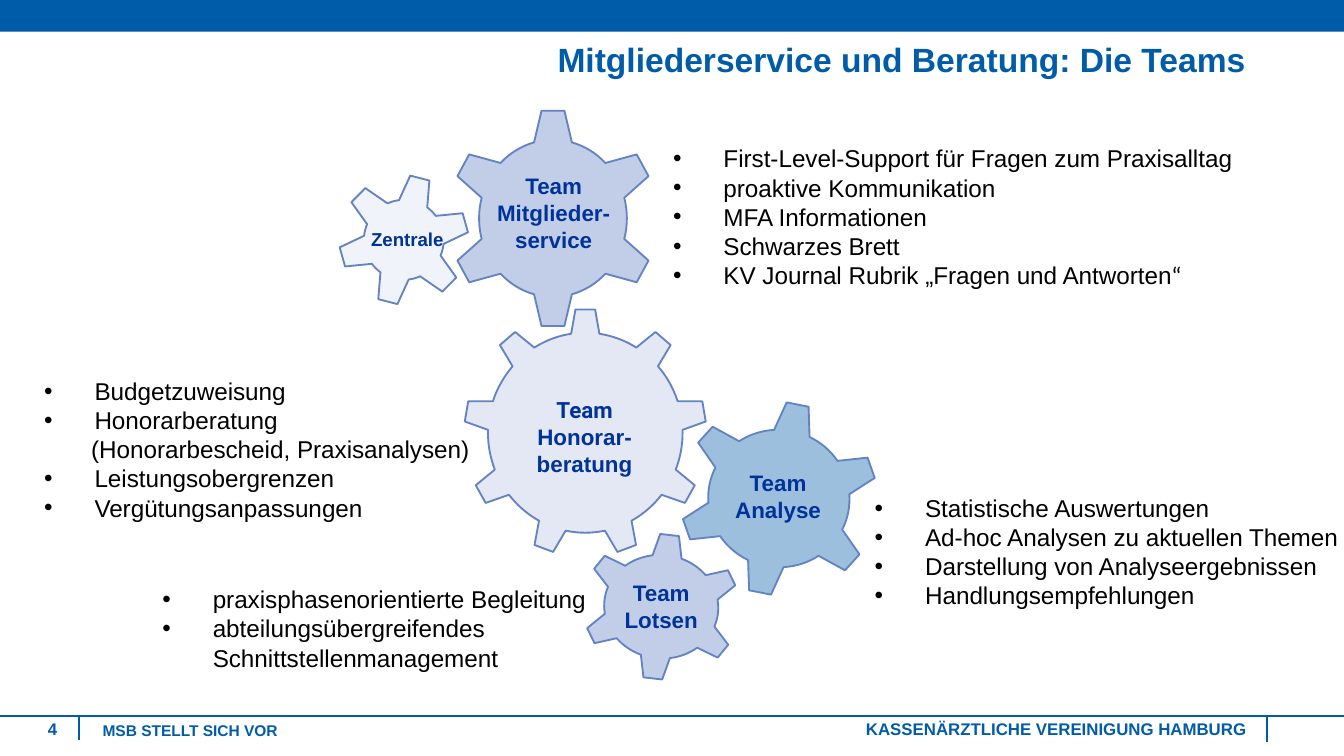
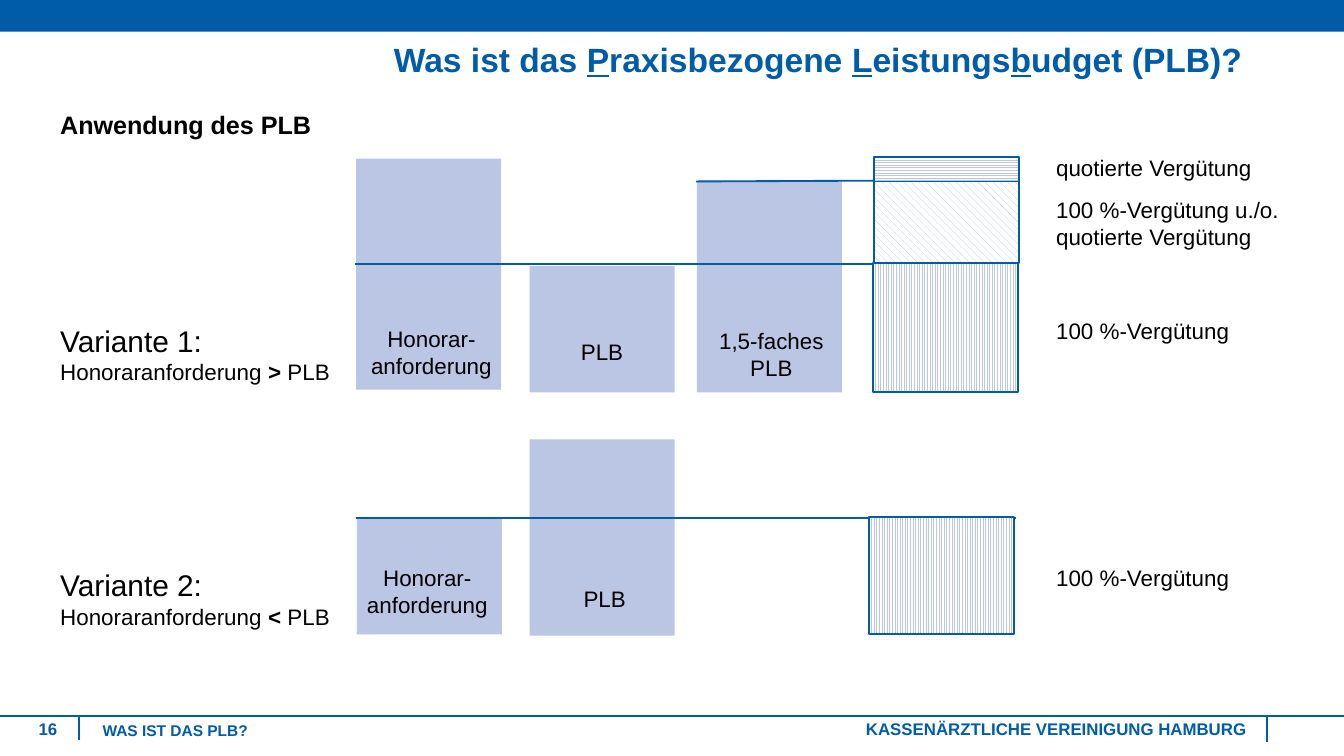
from lxml.etree import SubElement
from pptx import Presentation
from pptx.dml.color import RGBColor
from pptx.enum.dml import MSO_PATTERN
from pptx.enum.shapes import MSO_CONNECTOR, MSO_SHAPE
from pptx.enum.text import MSO_ANCHOR, MSO_AUTO_SIZE, PP_ALIGN
from pptx.oxml.ns import qn
from pptx.util import Inches, Pt

# Grid: 100 columns by 56.25 rows of a tenth of an inch
COLS, ROWS = 100, 56.25
BLUE, NAVY, BLACK = "005CA9", "003399", "000000"
LILAC, STEEL, ICE, WHITE = "BBC5E4", "6383C2", "DAE3F3", "FFFFFF"
LEFT, MID, RIGHT = PP_ALIGN.LEFT, PP_ALIGN.CENTER, PP_ALIGN.RIGHT


def rgb(code):
    return RGBColor.from_string(code)


def grid(*cells):
    return [Inches(cell / 10) for cell in cells]


class Deck:
    font = "Arial"
    edge = 1
    hang = 3.75

    def __init__(self):
        self.file = Presentation()
        self.file.slide_width, self.file.slide_height = grid(COLS, ROWS)

    def slide(self, number, title, topic, inset=1):
        """Start a slide with its band, title and footer."""
        page = self.file.slides.add_slide(self.file.slide_layouts[6])
        self.shapes = page.shapes
        self.block((0, 0, COLS, 2.36), BLUE)
        look = dict(color=BLUE, bold=True, grow=False)
        mid = dict(look, anchor=MSO_ANCHOR.MIDDLE)
        self.text((4.9, 2.3, 88.5, 4.6), [title], 18, align=RIGHT,
                  space=0.9, inset=inset, **mid)
        self.text((0.55, 52.75, 4.7, 3), [[str(number)]], 9, align=RIGHT, **mid)
        self.text((63.45, 52.75, 34.9, 3),
                  [["KASSENÄRZTLICHE VEREINIGUNG HAMBURG"]], 9, **mid)
        self.text((6.65, 53.4, 41.9, 2.2), [[topic]], 8.3, space=0.8, **look)
        self.rule(-0.4, 53.25, 101.2, 53.25)
        self.rule(5.9, 53.25, 5.9, 55.1)
        self.rule(94.3, 53.3, 94.3, 55.2)

    def block(self, box, fill, kind=MSO_SHAPE.RECTANGLE, line=None,
              pattern=None):
        """Draw a preset shape with a plain or hatched fill."""
        shape = self.shapes.add_shape(kind, *grid(*box))
        shape.shadow.inherit = False
        if pattern:
            shape.fill.patterned()
            shape.fill.pattern = pattern
            shape.fill.back_color.rgb = rgb(WHITE)
        else:
            shape.fill.solid()
        shape.fill.fore_color.rgb = rgb(fill)
        if line:
            shape.line.color.rgb = rgb(line)
            shape.line.width = Pt(self.edge)
        else:
            shape.line.fill.background()
        return shape

    def gear(self, box, fill, kind=MSO_SHAPE.GEAR_6, turn=0, teeth=()):
        """Draw a see-through gear."""
        shape = self.block(box, fill, kind, STEEL)
        shape.rotation = turn
        for index, value in enumerate(teeth):
            shape.adjustments[index] = value
        tint = shape.fill._xPr.find(".//" + qn("a:srgbClr"))
        SubElement(tint, qn("a:alpha"), val="39000")

    def rule(self, left, top, right, end):
        """Draw a straight line."""
        line = self.shapes.add_connector(
            MSO_CONNECTOR.STRAIGHT, *grid(left, top, right, end))
        line.line.color.rgb = rgb(BLUE)
        line.line.width = Pt(self.edge)
        SubElement(line._element.spPr, qn("a:effectLst"))

    def text(self, box, paras, size, color=BLACK, bold=False, align=LEFT,
             space=None, anchor=MSO_ANCHOR.TOP, inset=1, grow=True):
        """Write paragraphs, each a list of runs: a string or (string, style)."""
        frame = self.shapes.add_textbox(*grid(*box)).text_frame
        frame.word_wrap = True
        frame.vertical_anchor = anchor
        frame.margin_left = frame.margin_right = grid(inset)[0]
        frame.auto_size = (MSO_AUTO_SIZE.SHAPE_TO_FIT_TEXT if grow
                           else MSO_AUTO_SIZE.NONE)
        for index, runs in enumerate(paras):
            para = frame.add_paragraph() if index else frame.paragraphs[0]
            para.alignment = align
            if space:
                para.line_spacing = space
            for item in runs:
                words, style = (item, {}) if isinstance(item, str) else item
                if words == "\n":
                    para.add_line_break()
                    continue
                run = para.add_run()
                run.text = words
                run.font.name = style.get("font", self.font)
                run.font.size = Pt(style.get("size", size))
                run.font.bold = style.get("bold", bold)
                run.font.underline = style.get("under", False)
                run.font.color.rgb = rgb(color)
        return frame

    def bullets(self, box, paras, plain=()):
        """Write a bullet list; rows in plain are indented without a bullet."""
        frame = self.text(box, paras, 13)
        for index, para in enumerate(frame.paragraphs):
            props = para._p.get_or_add_pPr()
            if index in plain:
                props.set("marL", str(grid(3.5)[0]))
                continue
            props.set("marL", str(grid(self.hang)[0]))
            props.set("indent", str(-grid(self.hang)[0]))
            SubElement(props, qn("a:buFont"), typeface=self.font)
            SubElement(props, qn("a:buChar"), char="•")

    def label(self, box, paras, size=12):
        """Write a gear label."""
        self.text(box, paras, size, NAVY, True, MID)


def teams(deck):
    deck.slide(4, ["Mitgliederservice und Beratung: Die Teams"],
               "MSB STELLT SICH VOR", inset=0.7)

    # Gears
    deck.gear((33.3, 8.05, 15.7, 16.4), STEEL)
    deck.gear((34.5, 22.95, 18.1, 18.5), LILAC, MSO_SHAPE.GEAR_9)
    deck.gear((50.5, 29.8, 14.9, 14.6), BLUE, turn=11.3)
    deck.gear((43.3, 39.65, 11.8, 11), STEEL, turn=6.7)
    deck.gear((25.1, 12.9, 9.9, 9.9), ICE, turn=14.5, teeth=(0.2, 0.035))

    # Gear labels
    deck.label((35.3, 12.3, 11.8, 7.1), [["Team Mitglieder-service"]])
    deck.label((37.1, 29, 12.8, 7.1),
               [[("Team", {"font": "Roboto"})], ["Honorar-beratung"]])
    deck.label((50.4, 34.4, 15, 5), [["Team"], ["Analyse"]])
    deck.label((43.3, 42.6, 11.8, 5), [["Team"], ["Lotsen"]])
    deck.label((26.25, 16.5, 8.1, 2.7), [["Zentrale"]], 10)

    # Tasks of each team
    deck.bullets((49.1, 10.2, 44.4, 11.9), [
        ["First-Level-Support für Fragen zum Praxisalltag"],
        ["proaktive Kommunikation"],
        ["MFA Informationen"],
        ["Schwarzes Brett"],
        ["KV Journal Rubrik „Fragen und Antworten", ("“", {"font": "Calibri"})],
    ])
    deck.bullets((2.3, 27.5, 36.4, 11.9), [
        ["Budgetzuweisung"],
        ["Honorarberatung"],
        ["(Honorarbescheid, Praxisanalysen)"],
        ["Leistungsobergrenzen"],
        ["Vergütungsanpassungen"],
    ], plain=[2])
    deck.bullets((64.1, 36.2, 36.8, 9.8), [
        ["Statistische Auswertungen"],
        ["Ad-hoc Analysen zu aktuellen Themen"],
        ["Darstellung von Analyseergebnissen"],
        ["Handlungsempfehlungen"],
    ])
    deck.bullets((11.1, 43, 50, 9.8), [
        ["praxisphasenorientierte Begleitung"],
        ["abteilungsübergreifendes", "\n", "Schnittstellenmanagement"],
    ])


def budget(deck):
    line = {"under": True}
    deck.slide(16, ["Was ist das ", ("P", line), "raxisbezogene ",
                    ("L", line), "eistungs", ("b", line), "udget (PLB)?"],
               "WAS IST DAS PLB?")
    deck.text((3.5, 7.65, 56.7, 3.3), [["Anwendung des PLB"]], 13.5, bold=True)

    # Bars: left, top, height
    wide = 10.8
    for left, top, high in [(26.5, 11.8, 17.2), (39.4, 19.8, 9.4),
                            (51.85, 13.5, 15.7), (26.55, 38.5, 8.7),
                            (39.4, 32.7, 14.6)]:
        deck.block((left, top, wide, high), LILAC)

    # Limits
    deck.rule(26.4, 19.65, 75.8, 19.65)
    deck.rule(51.8, 13.5, 75.6, 13.4)
    deck.rule(26.5, 38.55, 75.6, 38.55)

    # Hatched payment bars
    for left, top, high, hatch in [
            (65, 11.7, 2.8, MSO_PATTERN.LIGHT_HORIZONTAL),
            (64.95, 19.6, 9.6, MSO_PATTERN.LIGHT_VERTICAL),
            (64.65, 38.5, 8.7, MSO_PATTERN.LIGHT_VERTICAL),
            (65, 13.5, 6.1, MSO_PATTERN.WIDE_DOWNWARD_DIAGONAL)]:
        deck.block((left, top, wide, high), LILAC, line=BLUE, pattern=hatch)

    # Variants
    small = {"size": 12}
    for top, number, sign in [(23.5, 1, ">"), (41.7, 2, "<")]:
        deck.text((3.5, top, 22.4, 5.7), [[
            f"Variante {number}: ", ("Honoraranforderung ", small),
            (sign, dict(small, bold=True)), (" PLB", small)]], 16)

    # Bar labels: left, top, width, height
    for left, top, wide, high, words in [
            (26.5, 23.7, 11.2, 5, "Honorar-anforderung"),
            (39.5, 24.7, 10.6, 3, "PLB"),
            (52.1, 23.85, 10.6, 5, "1,5-faches PLB"),
            (26.3, 41.5, 11, 5, "Honorar-anforderung"),
            (39.7, 43.05, 10.6, 3, "PLB")]:
        deck.text((left, top, wide, high), [[words]], 12, align=MID)

    # Payment labels: top, height
    for top, high, words in [
            (11, 3, "quotierte Vergütung"),
            (14.1, 5, "100 %-Vergütung u./o. quotierte Vergütung"),
            (23.1, 3, "100 %-Vergütung"),
            (41.5, 3, "100 %-Vergütung")]:
        deck.text((77.6, top, 18.9, high), [[words]], 12)


def main():
    deck = Deck()
    teams(deck)
    budget(deck)
    deck.file.save("out.pptx")


if __name__ == "__main__":
    main()
